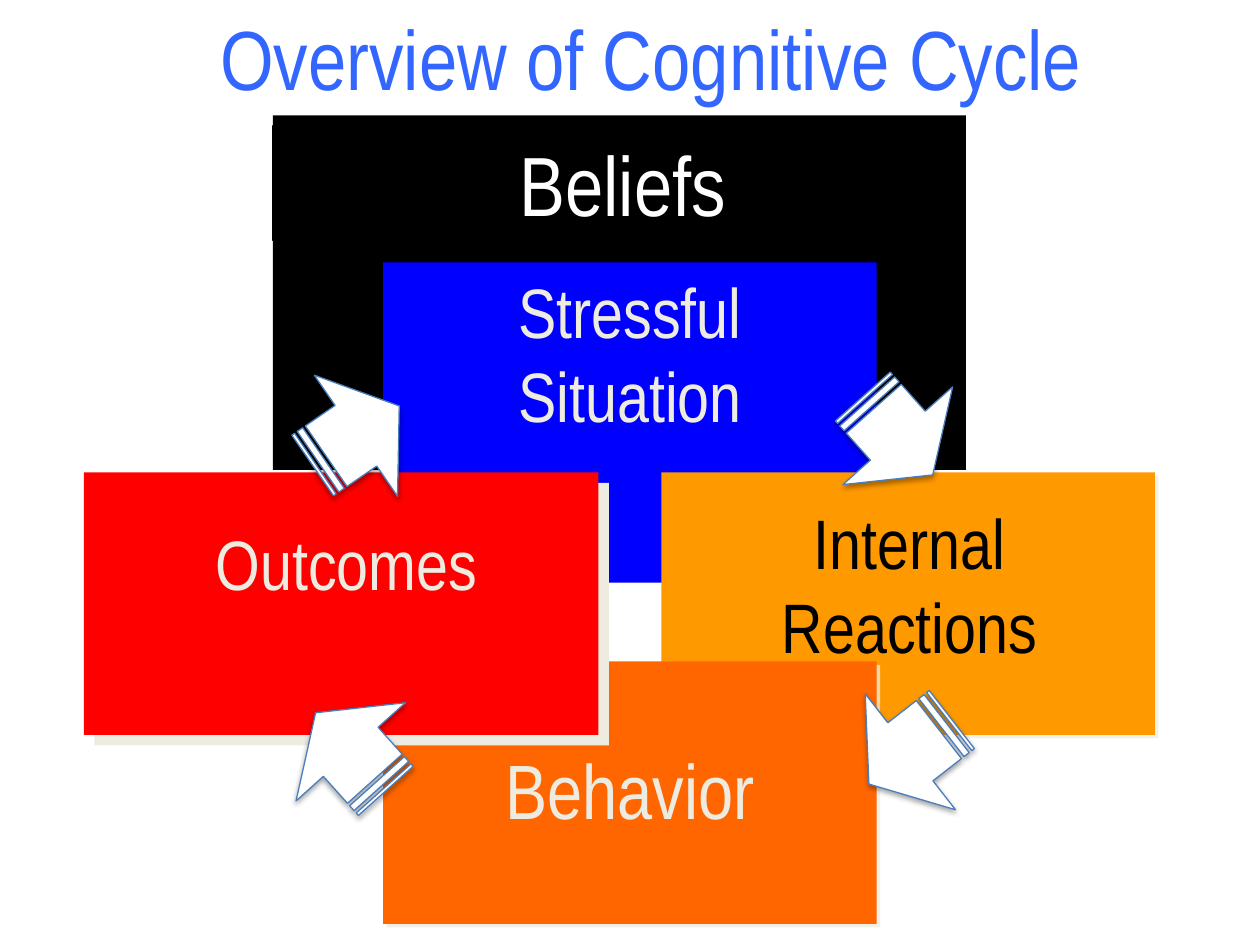
from collections import namedtuple

from lxml import etree
from pptx import Presentation
from pptx.dml.color import RGBColor
from pptx.enum.shapes import MSO_SHAPE
from pptx.enum.text import MSO_ANCHOR, PP_ALIGN
from pptx.oxml.ns import qn
from pptx.util import Inches, Pt

RECTANGLE = MSO_SHAPE.RECTANGLE
STRIPED_ARROW = MSO_SHAPE.STRIPED_RIGHT_ARROW
CENTER = PP_ALIGN.CENTER
TOP = MSO_ANCHOR.TOP
CELL = Inches(1) / 12
FONT = "Arial Narrow"
CREAM = "EEECE1"

Box = namedtuple("Box", "left top width height")
Shadow = namedtuple("Shadow", "color opacity blur distance angle")
Label = namedtuple("Label", "text box size color outline", defaults=[None])
Panel = namedtuple("Panel", "box fill label shadow", defaults=[None])

SOFT = Shadow(CREAM, 75, 0, 2.8, 45)
HARD = Shadow(CREAM, 100, 0, 8.5, 45)
ARROW_SHADOW = Shadow("000000", 35, 3.1, 1.8, 90)

TITLE = Label("Overview of Cognitive Cycle", Box(0, 0, 112, 10.9), 48, "3366FF")
PANELS = [
    Panel(Box(26, 11, 66, 33.75), "000000",
          Label(" Beliefs", Box(0, 1, 64.8, 10.9), 48, "FFFFFF", "000000")),
    Panel(Box(36.5, 25, 47, 30.5), "0000FF",
          Label("Stressful Situation", Box(1.5, 0, 44, 17.4), 40, CREAM)),
    Panel(Box(63, 45, 47, 25), "FF9900",
          Label("Internal Reactions", Box(3, 2, 41.2, 17.4), 40, "000000"), SOFT),
    Panel(Box(36.5, 63, 47, 25), "FF6600",
          Label("Behavior", Box(1.4, 7.1, 44.2, 10.1), 44, CREAM), SOFT),
    Panel(Box(8, 45, 49, 25), "FF0000",
          Label("Outcomes", Box(-1, 4, 52, 9.2), 40, CREAM), HARD),
]
ARROWS = [
    (Box(80.5, 34.5, 10, 14), 48.3),
    (Box(81.7, 64.6, 10, 14), 142.1),
    (Box(28.4, 64.6, 10, 14), 228.1),
    (Box(28.9, 34.5, 10, 14), 325.5),
]


def rgb(value):
    """Return the colour for a hex string."""
    return RGBColor.from_string(value)


def place(box):
    """Convert grid cells to slide lengths."""
    return [round(cells * CELL) for cells in box]


def cast_shadow(shape, shadow):
    """Replace the theme shadow with the given one, or with none."""
    shape.shadow.inherit = False
    if shadow is None:
        return
    effects = shape._element.spPr.find(qn("a:effectLst"))
    outer = etree.SubElement(
        effects, qn("a:outerShdw"), blurRad=str(Pt(shadow.blur)),
        dist=str(Pt(shadow.distance)), dir=str(shadow.angle * 60000),
        algn="ctr", rotWithShape="0")
    color = etree.SubElement(outer, qn("a:srgbClr"), val=shadow.color)
    etree.SubElement(color, qn("a:alpha"), val=str(shadow.opacity * 1000))


def add_label(shapes, origin, label):
    """Write a centred label offset from the origin of its region."""
    box = label.box._replace(left=origin.left + label.box.left,
                             top=origin.top + label.box.top)
    text_box = shapes.add_textbox(*place(box))
    if label.outline:
        text_box.line.color.rgb = rgb(label.outline)
        text_box.line.width = Pt(0.75)
    frame = text_box.text_frame
    frame.word_wrap = True
    frame.vertical_anchor = TOP
    para = frame.paragraphs[0]
    para.alignment = CENTER
    span = para.add_run()
    span.text = label.text
    span.font.name = FONT
    span.font.size = Pt(label.size)
    span.font.color.rgb = rgb(label.color)


def add_panel(page, panel):
    """Group a filled rectangle with its label."""
    group = page.shapes.add_group_shape()
    shape = group.shapes.add_shape(RECTANGLE, *place(panel.box))
    shape.fill.solid()
    shape.fill.fore_color.rgb = rgb(panel.fill)
    shape.line.fill.background()
    cast_shadow(shape, panel.shadow)
    add_label(group.shapes, panel.box, panel.label)


def add_cycle_arrow(page, box, angle):
    """Draw one striped arrow of the cycle."""
    arrow = page.shapes.add_shape(STRIPED_ARROW, *place(box))
    arrow.rotation = angle
    arrow.fill.solid()
    arrow.fill.fore_color.rgb = rgb("FFFFFF")
    arrow.line.color.rgb = rgb("4B7EBC")
    arrow.line.width = Pt(0.75)
    cast_shadow(arrow, ARROW_SHADOW)


def main():
    """Build and save the slide."""
    deck = Presentation()
    deck.slide_width, deck.slide_height = Inches(10), Inches(7.5)
    page = deck.slides.add_slide(deck.slide_layouts[6])
    page.background.fill.solid()
    page.background.fill.fore_color.rgb = rgb("FFFFFF")
    for panel in PANELS:
        add_panel(page, panel)
    add_label(page.shapes, Box(6, 0, 112, 10.9), TITLE)
    for box, angle in ARROWS:
        add_cycle_arrow(page, box, angle)
    deck.save("out.pptx")


if __name__ == "__main__":
    main()
